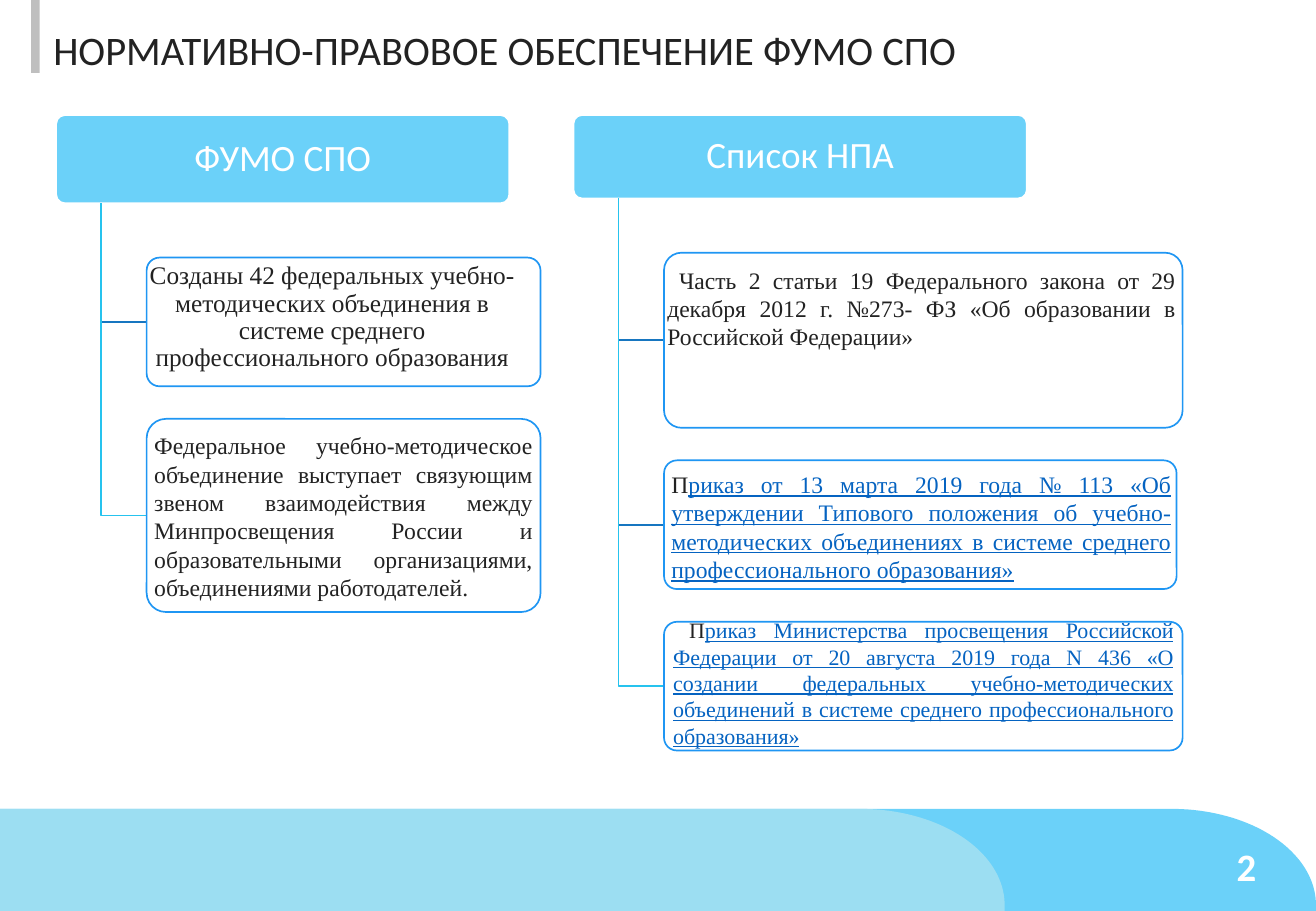
from math import cos, pi, sin

from lxml.etree import SubElement
from pptx import Presentation
from pptx.dml.color import RGBColor
from pptx.enum.shapes import MSO_SHAPE
from pptx.enum.text import MSO_ANCHOR, MSO_AUTO_SIZE, PP_ALIGN
from pptx.oxml.ns import qn
from pptx.util import Pt

COLORS = {
    "text": "222222", "white": "FFFFFF", "link": "0563C1", "accent": "BFBFBF",
    "header": "6BD1F9", "band": "9CDEF2", "card_line": "1F96F3",
    "inner_branch": "1776C0", "last_branch": "26C3EE",
}
WIDTH, HEIGHT = 780, 540
SERIF, SANS = "Times New Roman", "Calibri"

# Each column: heading, left, heading height, cards.
# Each card: top, width, height, text area, text runs, text format.
COLUMNS = [
    ("ФУМО СПО", 33.3, 52.3, [
        (152.7, 233.5, 76.3, (83.5, 152, 226.8, 72.8),
         [("Созданы 42 федеральных учебно-методических объединения в системе "
           "среднего профессионального образования", "text")],
         {"size": 15, "align": PP_ALIGN.CENTER, "spacing": 0.9}),
        (248.3, 233.5, 114.5, (90.2, 252, 226.8, 108),
         [("Федеральное учебно-методическое объединение выступает связующим звеном "
           "взаимодействия между Минпросвещения России и образовательными "
           "организациями, объединениями работодателей.", "text")],
         {"size": 14}),
    ]),
    ("Список НПА", 340, 49.4, [
        (149.8, 307.4, 103.8, (394.3, 136.1, 303.8, 92.9),
         [("Часть 2 статьи 19 Федерального закона от 29 декабря 2012 г. №273- ФЗ "
           "«Об образовании в Российской Федерации»", "text")],
         {"size": 14, "indent": 7}),
        (272.9, 303.8, 76.3, (396.7, 270, 298.8, 84.2),
         [("П", "text"),
          ("риказ от 13 марта 2019 года № 113 «Об утверждении Типового положения об "
           "учебно-методических объединениях в системе среднего профессионального "
           "образования»", "link")],
         {"size": 14}),
        (368.6, 307.4, 76.3, (397.8, 366.5, 298.8, 76.3),
         [("П", "text"),
          ("риказ Министерства просвещения Российской Федерации от 20 августа 2019 "
           "года N 436 «О создании федеральных учебно-методических объединений в "
           "системе среднего профессионального образования»", "link")],
         {"size": 13, "indent": 9.5}),
    ]),
]


def color(name):
    return RGBColor.from_string(COLORS[name])


def write(frame, runs, size, font=SERIF, align=PP_ALIGN.JUSTIFY, anchor=MSO_ANCHOR.MIDDLE,
          spacing=1.0, indent=0, bold=False, insets=(1.2, 1.2)):
    frame.word_wrap = True
    frame.auto_size = MSO_AUTO_SIZE.NONE
    frame.vertical_anchor = anchor
    frame.margin_left = frame.margin_right = Pt(insets[0])
    frame.margin_top = frame.margin_bottom = Pt(insets[1])
    paragraph = frame.paragraphs[0]
    paragraph.alignment = align
    paragraph.line_spacing = spacing
    paragraph.space_before = Pt(0)
    if indent:
        paragraph._p.get_or_add_pPr().set("indent", str(Pt(indent)))
    for text, tone in runs:
        run = paragraph.add_run()
        run.text = text
        run.font.name = font
        run.font.size = Pt(size)
        run.font.bold = bold
        run.font.underline = tone == "link"
        run.font.color.rgb = color(tone)


def add_text(slide, area, runs, **text_format):
    label = slide.shapes.add_textbox(*map(Pt, area))
    write(label.text_frame, runs, **text_format)


def paint(shape, fill=None, line=None):
    shape.shadow.inherit = False
    if fill:
        shape.fill.solid()
        shape.fill.fore_color.rgb = color(fill)
    else:
        shape.fill.background()
    if line:
        shape.line.color.rgb = color(line)
        shape.line.width = Pt(1)
    else:
        shape.line.fill.background()


def add_block(slide, kind, area, fill, line=None):
    block = slide.shapes.add_shape(kind, *map(Pt, area))
    paint(block, fill, line)
    if kind == MSO_SHAPE.ROUNDED_RECTANGLE:
        block.adjustments[0] = 0.1
    return block


def add_outline(slide, points, close, fill=None, line=None):
    corners = [(Pt(x), Pt(y)) for x, y in points]
    builder = slide.shapes.build_freeform(*corners[0], scale=1.0)
    builder.add_line_segments(corners[1:], close=close)
    paint(builder.convert_to_shape(), fill, line)


def add_card(slide, area):
    card = add_block(slide, MSO_SHAPE.ROUNDED_RECTANGLE, area, "white", "card_line")
    tint = card._element.spPr.find(qn("a:solidFill"))[0]
    SubElement(tint, qn("a:alpha")).set("val", "90000")


def add_column(slide, heading, left, heading_height, cards):
    top = 68.2
    header = add_block(slide, MSO_SHAPE.ROUNDED_RECTANGLE,
                       (left, top, 268.6, heading_height), "header", "white")
    write(header.text_frame, [(heading, "white")], size=22, font=SANS,
          align=PP_ALIGN.CENTER, spacing=0.9, insets=(3.6, 2.2))
    trunk, card_left = left + 26.6, left + 53.6
    for card_top, width, height, text_area, runs, text_format in cards:
        middle = card_top + height / 2
        branch = "last_branch" if card_top == cards[-1][0] else "inner_branch"
        add_outline(slide, [(trunk, top + heading_height), (trunk, middle), (card_left, middle)],
                    close=False, line=branch)
        add_card(slide, (card_left, card_top, width, height))
        add_text(slide, text_area, runs, **text_format)


def add_footer_band(slide, right, fill):
    top, radius_x, radius_y, steps = 479.5, 85.5, 57, 40
    angles = [pi / 2 * step / steps for step in range(steps + 1)]
    curve = [(right - radius_x * (1 - sin(a)), top + radius_y * (1 - cos(a))) for a in angles]
    add_outline(slide, [(0, top), *curve, (right, HEIGHT), (0, HEIGHT)], close=True, fill=fill)


def main():
    deck = Presentation()
    deck.slide_width, deck.slide_height = Pt(WIDTH), Pt(HEIGHT)
    slide = deck.slides.add_slide(deck.slide_layouts[5])

    # Title and its accent bar
    title = slide.shapes.title
    title.left, title.top, title.width, title.height = map(Pt, (23, 10.8, 571, 37.4))
    write(title.text_frame, [("НОРМАТИВНО-ПРАВОВОЕ ОБЕСПЕЧЕНИЕ ФУМО СПО", "text")], size=24,
          font=SANS, align=PP_ALIGN.LEFT, anchor=MSO_ANCHOR.TOP, insets=(8.6, 4.3))
    add_block(slide, MSO_SHAPE.RECTANGLE, (18.5, 0, 5, 43.2), "accent")

    # Two trees of cards
    for column in COLUMNS:
        add_column(slide, *column)

    # Footer with the page number
    add_footer_band(slide, WIDTH, "header")
    add_footer_band(slide, 595.5, "band")
    add_text(slide, (571, 495.4, 182.2, 28.8), [("2", "white")], size=23, font=SANS, bold=True,
             align=PP_ALIGN.RIGHT, anchor=MSO_ANCHOR.TOP, insets=(8.6, 4.3))

    deck.save("out.pptx")


if __name__ == "__main__":
    main()
